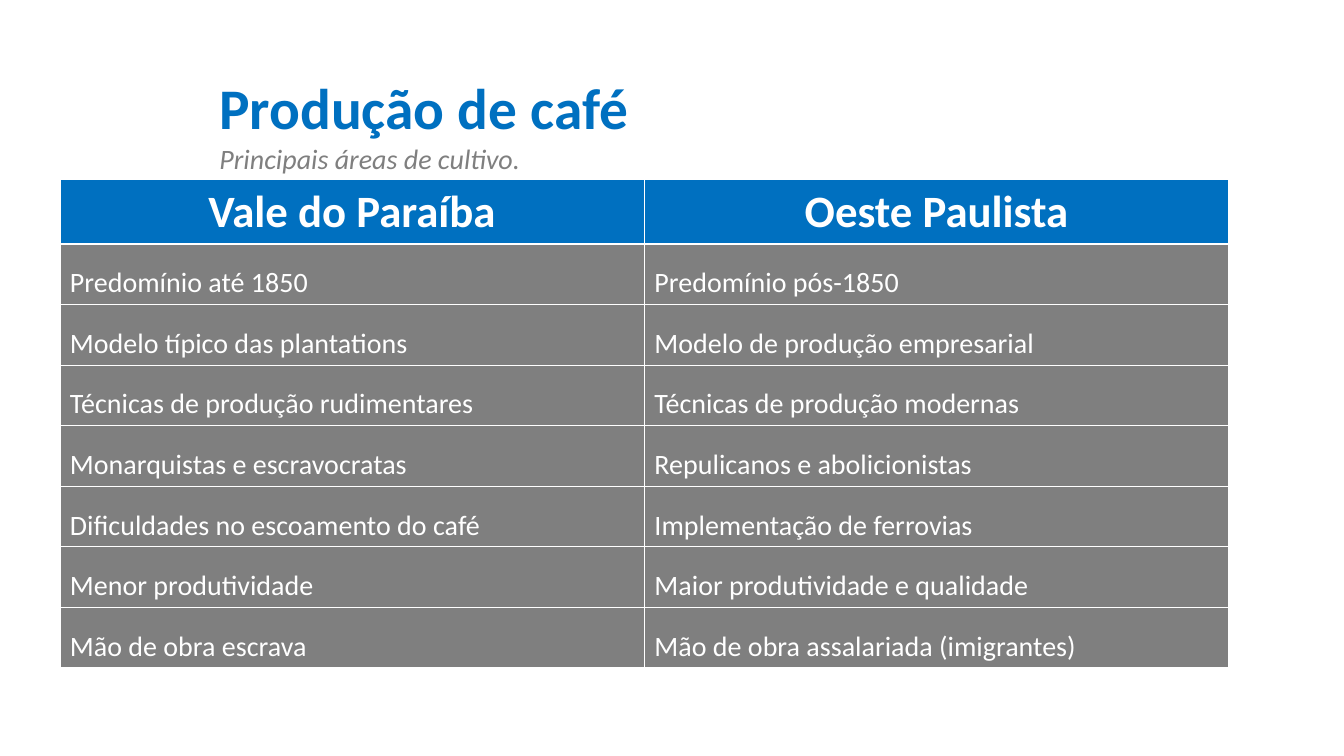
from dataclasses import dataclass

from pptx import Presentation
from pptx.dml.color import RGBColor as RGB
from pptx.enum.text import MSO_ANCHOR as Anchor, MSO_AUTO_SIZE as Fit, PP_ALIGN as Align
from pptx.util import Cm, Pt


@dataclass(frozen=True)
class Theme:
    face: str = "Calibri"
    blue: RGB = RGB(0x00, 0x70, 0xC0)
    gray: RGB = RGB(0x7F, 0x7F, 0x7F)
    white: RGB = RGB(0xFF, 0xFF, 0xFF)
    title: Pt = Pt(41)
    head: Pt = Pt(32)
    body: Pt = Pt(20)


theme = Theme()


def style(para, size, color, bold=False, italic=False):
    font = para.font
    font.name, font.size = theme.face, size
    font.bold, font.italic = bold, italic
    font.color.rgb = color


deck = Presentation()
deck.slide_width, deck.slide_height = Cm(33.87), Cm(19.05)
slide = deck.slides.add_slide(deck.slide_layouts[6])

# Title and subtitle
frame = slide.shapes.add_textbox(Cm(5.28), Cm(1.7), Cm(10.87), Cm(2.84)).text_frame
frame.word_wrap = False
frame.auto_size = Fit.SHAPE_TO_FIT_TEXT
title = frame.paragraphs[0]
title.text = "Produção de café"
style(title, theme.title, theme.blue, bold=True)
lead = frame.add_paragraph()
lead.text = "Principais áreas de cultivo."
style(lead, theme.body, theme.gray, italic=True)

# Comparison table; the default table style draws the white rules
rows = [
    ("Vale do Paraíba", "Oeste Paulista"),
    ("Predomínio até 1850", "Predomínio pós-1850"),
    ("Modelo típico das plantations", "Modelo de produção empresarial"),
    ("Técnicas de produção rudimentares", "Técnicas de produção modernas"),
    ("Monarquistas e escravocratas", "Repulicanos e abolicionistas"),
    ("Dificuldades no escoamento do café", "Implementação de ferrovias"),
    ("Menor produtividade", "Maior produtividade e qualidade"),
    ("Mão de obra escrava", "Mão de obra assalariada (imigrantes)"),
]
table = slide.shapes.add_table(
    len(rows), 2, Cm(1.51), Cm(4.53), Cm(29.46), Cm(12.26)).table
table.horz_banding = False

for r, texts in enumerate(rows):
    head = r == 0
    table.rows[r].height = Cm(1.62 if head else 1.52)
    for c, text in enumerate(texts):
        cell = table.cell(r, c)
        cell.fill.solid()
        cell.fill.fore_color.rgb = theme.blue if head else theme.gray
        para = cell.text_frame.paragraphs[0]
        para.text = text
        if head:
            para.alignment = Align.CENTER
        else:
            cell.vertical_anchor = Anchor.MIDDLE
            para.line_spacing = 1.5
        style(para, theme.head if head else theme.body, theme.white, bold=head)

deck.save("out.pptx")
